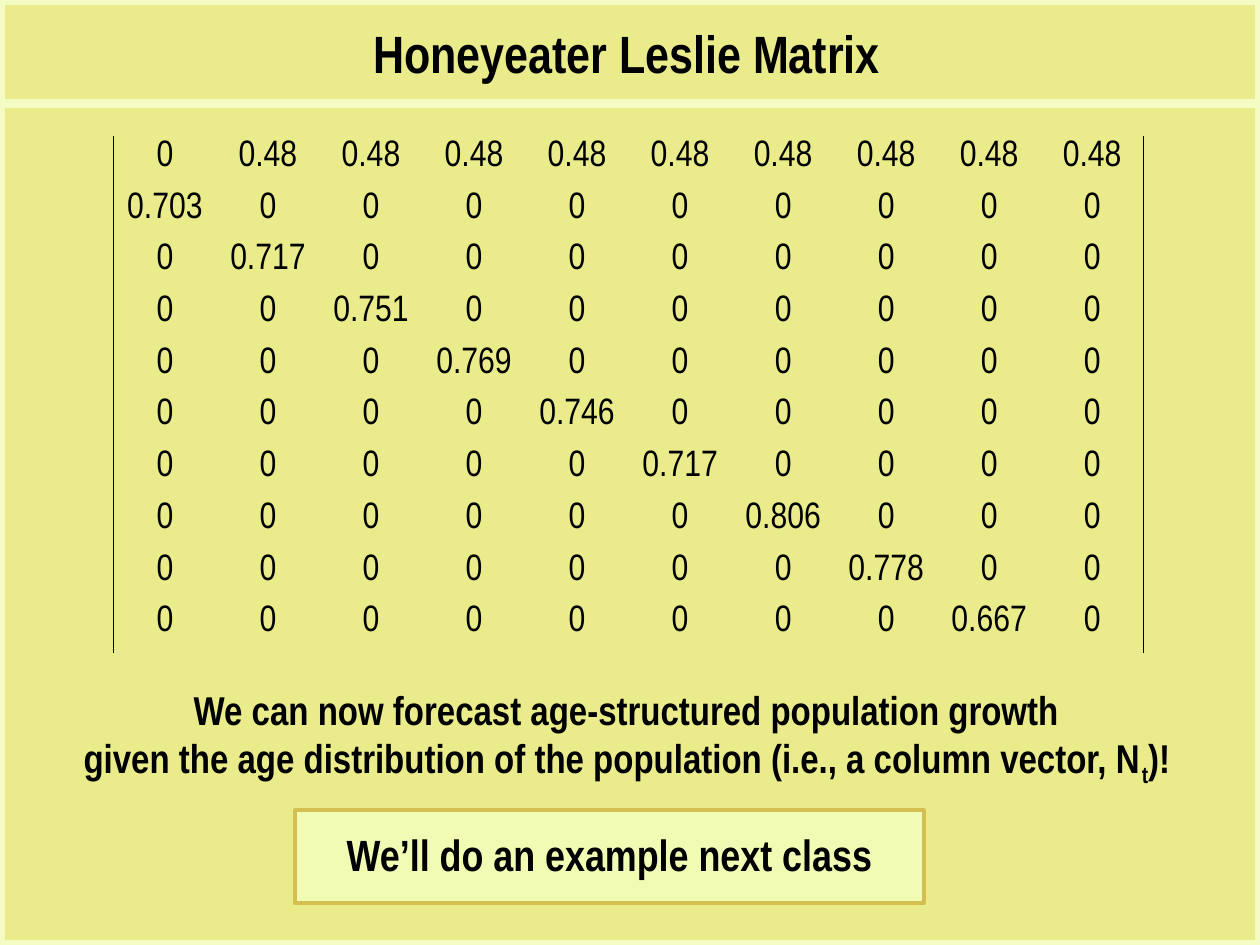
from lxml import etree
from pptx import Presentation
from pptx import util as u
from pptx.dml import color
from pptx.enum import shapes, text
from pptx.oxml import ns

WIDTH, HEIGHT = 10, 7.5
FONT = "Arial Narrow"
INK, PAPER, EDGE = "000000", "EAEC8C", "F4FCC4"
PANEL, GOLD = "F1FBB3", "D3C051"
PLAIN_TABLE = "{2D5ABB26-0587-4C30-8999-92F81FD0307C}"

# Leslie matrix: fecundity on the first row, survival below the diagonal
AGES = 10
FECUNDITY = "0.48"
SURVIVAL = ["0.703", "0.717", "0.751", "0.769", "0.746",
            "0.717", "0.806", "0.778", "0.667"]
CELL_WIDTH, CELL_HEIGHT = 0.818, 0.41


def rgb(value):
    return color.RGBColor.from_string(value)


def inches(*lengths):
    return [u.Inches(length) for length in lengths]


def apply(target, values):
    for name, value in values.items():
        setattr(target, name, value)


def add_span(para, words, size, bold=True, baseline=None):
    span = para.add_run()
    span.text = words
    apply(span.font, {"name": FONT, "size": u.Pt(size), "bold": bold})
    span.font.color.rgb = rgb(INK)
    if baseline:
        span.font._element.set("baseline", str(baseline * 1000))


def add_text(parent, area, size, lines):
    """Each line is a list of (words, baseline) pairs."""
    box = parent.add_textbox(*inches(*area))
    frame = box.text_frame
    apply(frame, {"word_wrap": True,
                  "auto_size": text.MSO_AUTO_SIZE.SHAPE_TO_FIT_TEXT})
    for index, line in enumerate(lines):
        para = frame.add_paragraph() if index else frame.paragraphs[0]
        para.alignment = text.PP_ALIGN.CENTER
        for words, baseline in line:
            add_span(para, words, size, baseline=baseline)


def add_panel(parent, area, line, weight, fill=None):
    panel = parent.add_shape(shapes.MSO_SHAPE.RECTANGLE, *inches(*area))
    panel.shadow.inherit = False
    if fill:
        panel.fill.solid()
        panel.fill.fore_color.rgb = rgb(fill)
    else:
        panel.fill.background()
    panel.line.color.rgb = rgb(line)
    panel.line.width = u.Pt(weight)


def add_rule(parent, y, line, weight):
    rule = parent.add_connector(shapes.MSO_CONNECTOR.STRAIGHT,
                                *inches(0, y, WIDTH, y))
    rule.line.color.rgb = rgb(line)
    rule.line.width = u.Pt(weight)
    etree.SubElement(rule._element.spPr, ns.qn("a:effectLst"))


def add_border(cell, side):
    border = etree.Element(ns.qn(f"a:{side}"), w=str(u.Pt(1)))
    fill = etree.SubElement(border, ns.qn("a:solidFill"))
    etree.SubElement(fill, ns.qn("a:srgbClr"), val=INK)
    cell._tc.get_or_add_tcPr().insert(0, border)


def matrix_value(row, column):
    if row == 0:
        return FECUNDITY if column else "0"
    return SURVIVAL[column] if column == row - 1 else "0"


def add_matrix(parent, left, top):
    frame = parent.add_table(AGES, AGES, *inches(
        left, top, AGES * CELL_WIDTH, AGES * CELL_HEIGHT))
    table = frame.table
    apply(table, {"first_row": False, "horz_banding": False})
    table._tbl.tblPr.find(ns.qn("a:tableStyleId")).text = PLAIN_TABLE
    margins = {f"margin_{side}": u.Inches(0.03)
               for side in ("left", "right", "top", "bottom")}
    for row in range(AGES):
        for column in range(AGES):
            cell = table.cell(row, column)
            apply(cell, margins)
            cell.fill.background()
            para = cell.text_frame.paragraphs[0]
            para.alignment = text.PP_ALIGN.CENTER
            add_span(para, matrix_value(row, column), 21, bold=False)
        # Vertical bars enclose the matrix
        add_border(table.cell(row, 0), "lnL")
        add_border(table.cell(row, AGES - 1), "lnR")


def main():
    deck = Presentation()
    apply(deck, {"slide_width": u.Inches(WIDTH),
                 "slide_height": u.Inches(HEIGHT)})
    page = deck.slides.add_slide(deck.slide_layouts[6])
    page.background.fill.solid()
    page.background.fill.fore_color.rgb = rgb(PAPER)

    # Title band and page frame
    add_rule(page.shapes, 0.82, EDGE, 5)
    add_panel(page.shapes, (0, 0, WIDTH, HEIGHT), EDGE, 6)
    add_text(page.shapes, (0.74, 0.12, 8.47, 0.61), 30,
             [[("Honeyeater Leslie Matrix", None)]])

    # Conclusion below the matrix
    add_text(page.shapes, (0.25, 5.39, 9.45, 0.88), 23, [
        [("We can now forecast age-structured population growth", None)],
        [("given the age distribution of the population "
          "(i.e., a column vector, N", None), ("t", -25), (")!", None)],
    ])

    # Announcement panel
    notice = page.shapes.add_group_shape().shapes
    add_panel(notice, (2.34, 6.43, 4.99, 0.74), GOLD, 2.25, PANEL)
    add_text(notice, (2.34, 6.52, 4.99, 0.52), 25,
             [[("We’ll do an example next class", None)]])

    # Matrix
    add_matrix(page.shapes, 0.9, 1.08)

    deck.save("out.pptx")


if __name__ == "__main__":
    main()
